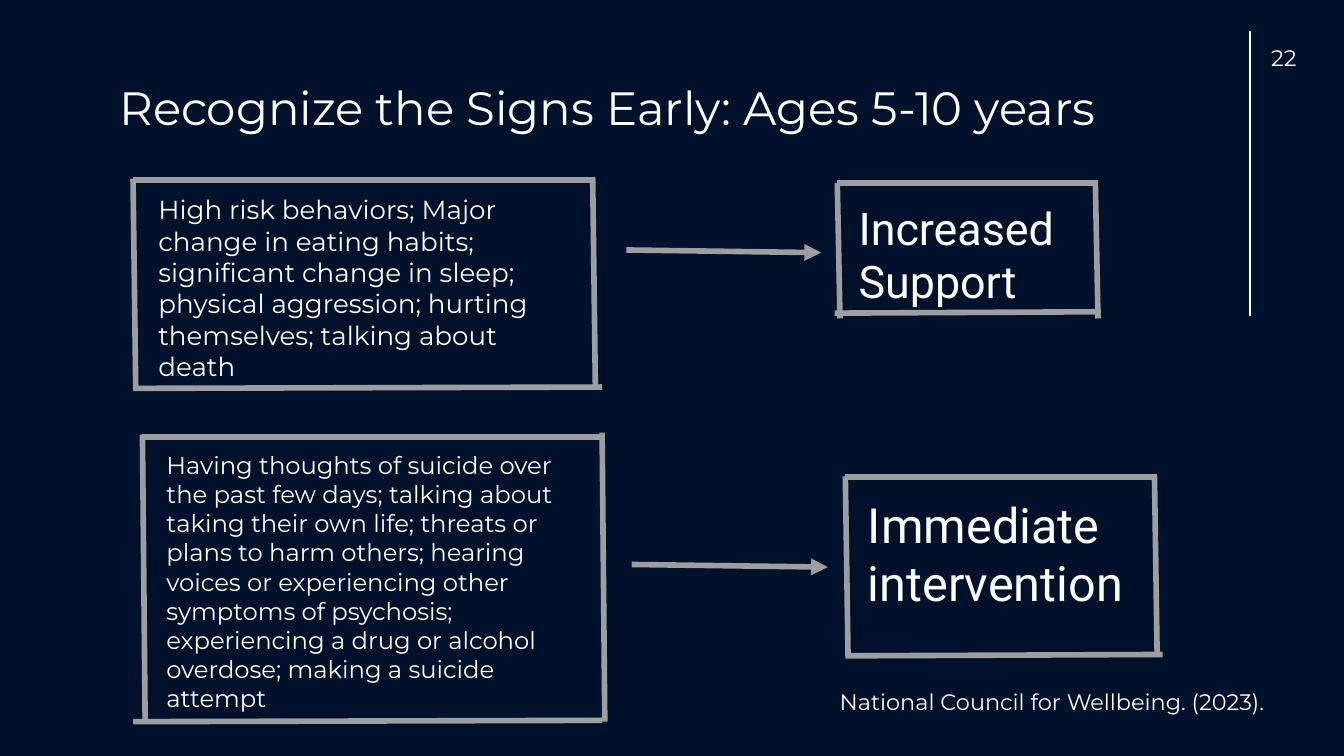
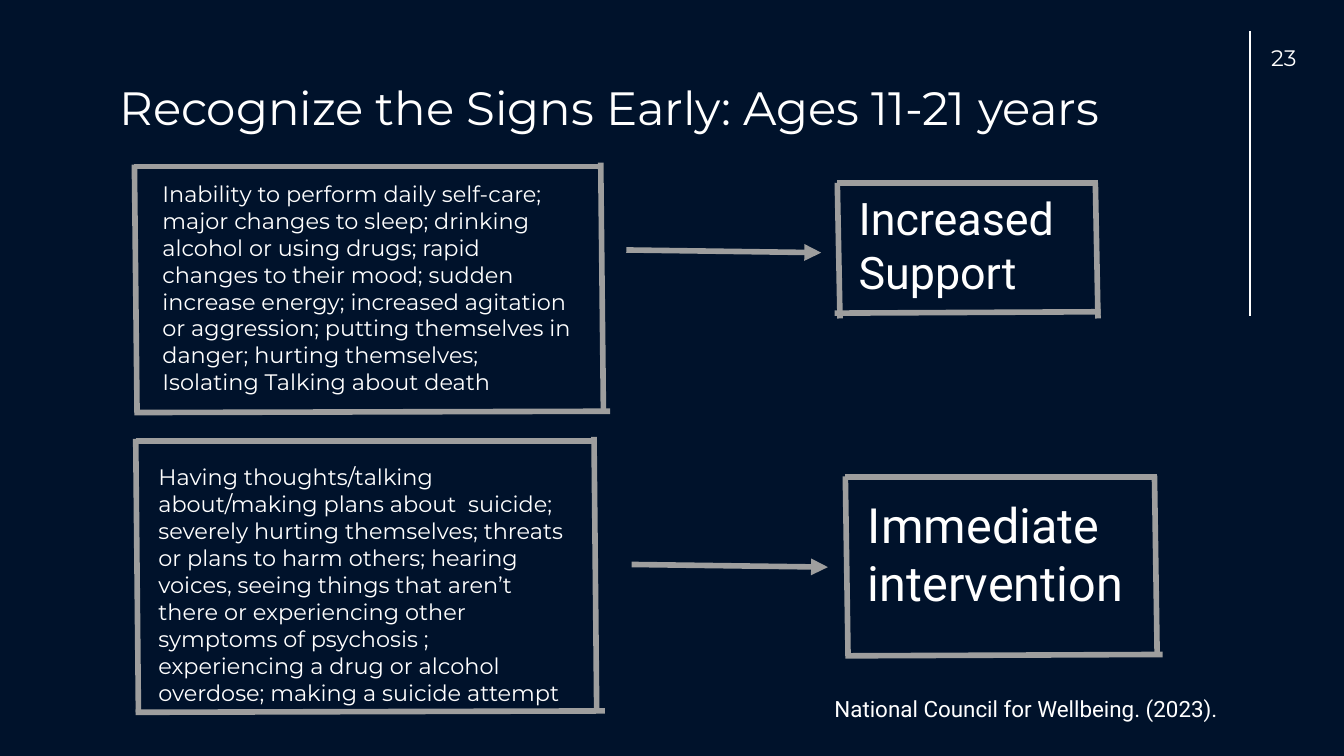
import lxml.etree
import pptx
import pptx.dml.color
import pptx.enum.shapes
import pptx.oxml.ns
import pptx.util

Inches = pptx.util.Inches
DARK, WHITE, GREY = "00122B", "FFFFFF", "9E9E9E"
MAIN, SIDE = "Montserrat", "Roboto"


def color(hex):
    return pptx.dml.color.RGBColor.from_string(hex)


class Deck:
    """Holds the shared style and the current slide."""

    def __init__(self):
        self.prs = pptx.Presentation()
        self.prs.slide_width = Inches(10)
        self.prs.slide_height = Inches(10 * 9 / 16)

    def page(self, title, number):
        self.slide = self.prs.slides.add_slide(self.prs.slide_layouts[6])
        fill = self.slide.background.fill
        fill.solid()
        fill.fore_color.rgb = color(DARK)
        self.line(9.3, 0.23, 9.3, 2.35, WHITE, 0.75)
        self.text(title, 0.79, 0.49, 8.43, 0.63, 25)
        self.text(str(number), 9.36, 0.23, 0.6, 0.35, 12)

    def line(self, x1, y1, x2, y2, hue=GREY, width=3, arrow=False):
        link = self.slide.shapes.add_connector(
            pptx.enum.shapes.MSO_CONNECTOR.STRAIGHT,
            Inches(x1), Inches(y1), Inches(x2), Inches(y2))
        link.line.color.rgb = color(hue)
        link.line.width = pptx.util.Pt(width)
        qn = pptx.oxml.ns.qn
        props = link._element.spPr
        if arrow:
            lxml.etree.SubElement(props.find(qn("a:ln")), qn("a:tailEnd"), type="triangle")
        lxml.etree.SubElement(props, qn("a:effectLst"))

    def text(self, words, left, top, width, height, size, face=MAIN):
        box = self.slide.shapes.add_textbox(
            Inches(left), Inches(top), Inches(width), Inches(height))
        frame = box.text_frame
        frame.word_wrap = True
        frame.margin_left = frame.margin_right = Inches(0.1)
        frame.margin_top = frame.margin_bottom = Inches(0.1)
        frame.text = words
        for para in frame.paragraphs:
            for run in para.runs:
                run.font.size = pptx.util.Pt(size)
                run.font.name = face
                run.font.color.rgb = color(WHITE)

    def frame(self, left, top, right, bottom, start, end, rise=0.02, drop=0):
        lean = 0.02
        self.line(right, bottom + drop, right - lean, top - rise)
        self.line(left + lean, bottom + drop, left, top - rise / 2)
        self.line(left, top, right, top)
        self.line(start, bottom, end, bottom - 0.01)

    def steps(self, top, width):
        self.text("Increased Support", 6.29, top, width, 0.95, 24, SIDE)
        self.frame(6.23, 1.36, 8.17, 2.33, 6.21, 8.19, rise=0, drop=0.04)
        self.text("Immediate intervention", 6.36, 3.58, 2.17, 1.26, 26, SIDE)
        self.frame(6.29, 3.55, 8.61, 4.88, 6.29, 8.65, rise=0.01)
        self.line(4.66, 1.86, 6.11, 1.88, arrow=True)
        self.line(4.7, 4.2, 6.16, 4.22, arrow=True)

    def source(self, left, top, width, height, face):
        self.text("National Council for Wellbeing. (2023).", left, top, width, height, 12, face)


def main():
    deck = Deck()

    deck.page("Recognize the Signs Early: Ages 5-10 years", 22)
    deck.frame(0.99, 1.34, 4.43, 2.89, 0.99, 4.48)
    deck.steps(1.39, 1.81)
    deck.frame(1.06, 3.25, 4.5, 5.37, 0.99, 4.48, rise=0.03)
    deck.source(6.15, 5.02, 3.44, 0.35, MAIN)
    deck.text(
        "High risk behaviors; Major change in eating habits; significant change in "
        "sleep; physical aggression; hurting themselves; talking about death",
        1.08, 1.34, 3.25, 1.47, 14)
    deck.text(
        "Having thoughts of suicide over the past few days; talking about taking "
        "their own life; threats or plans to harm others; hearing voices or "
        "experiencing other symptoms of psychosis; experiencing a drug or alcohol "
        "overdose; making a suicide attempt",
        1.14, 3.25, 3.28, 2.17, 13)

    deck.page("Recognize the Signs Early: Ages 11-21 years", 23)
    deck.frame(1, 1.24, 4.49, 3.07, 1, 4.54, rise=0.03)
    deck.steps(1.32, 1.69)
    deck.frame(1.01, 3.28, 4.44, 5.3, 1.01, 4.5, rise=0.03)
    deck.source(6.11, 5.07, 3.28, 0.4, SIDE)
    deck.text(
        "Inability to perform daily self-care; major changes to sleep; drinking "
        "alcohol or using drugs; rapid changes to their mood; sudden increase "
        "energy; increased agitation or aggression; putting themselves in danger; "
        "hurting themselves;\nIsolating Talking about death",
        1.11, 1.24, 3.25, 1.79, 12)
    deck.text(
        "Having thoughts/talking  about/making plans about  suicide; severely "
        "hurting themselves; threats or plans to harm others; hearing voices, "
        "seeing things that aren’t there or experiencing other symptoms of "
        "psychosis ; experiencing a drug or alcohol overdose; making a suicide attempt",
        1.08, 3.35, 3.28, 1.67, 12)

    deck.prs.save("out.pptx")


if __name__ == "__main__":
    main()
